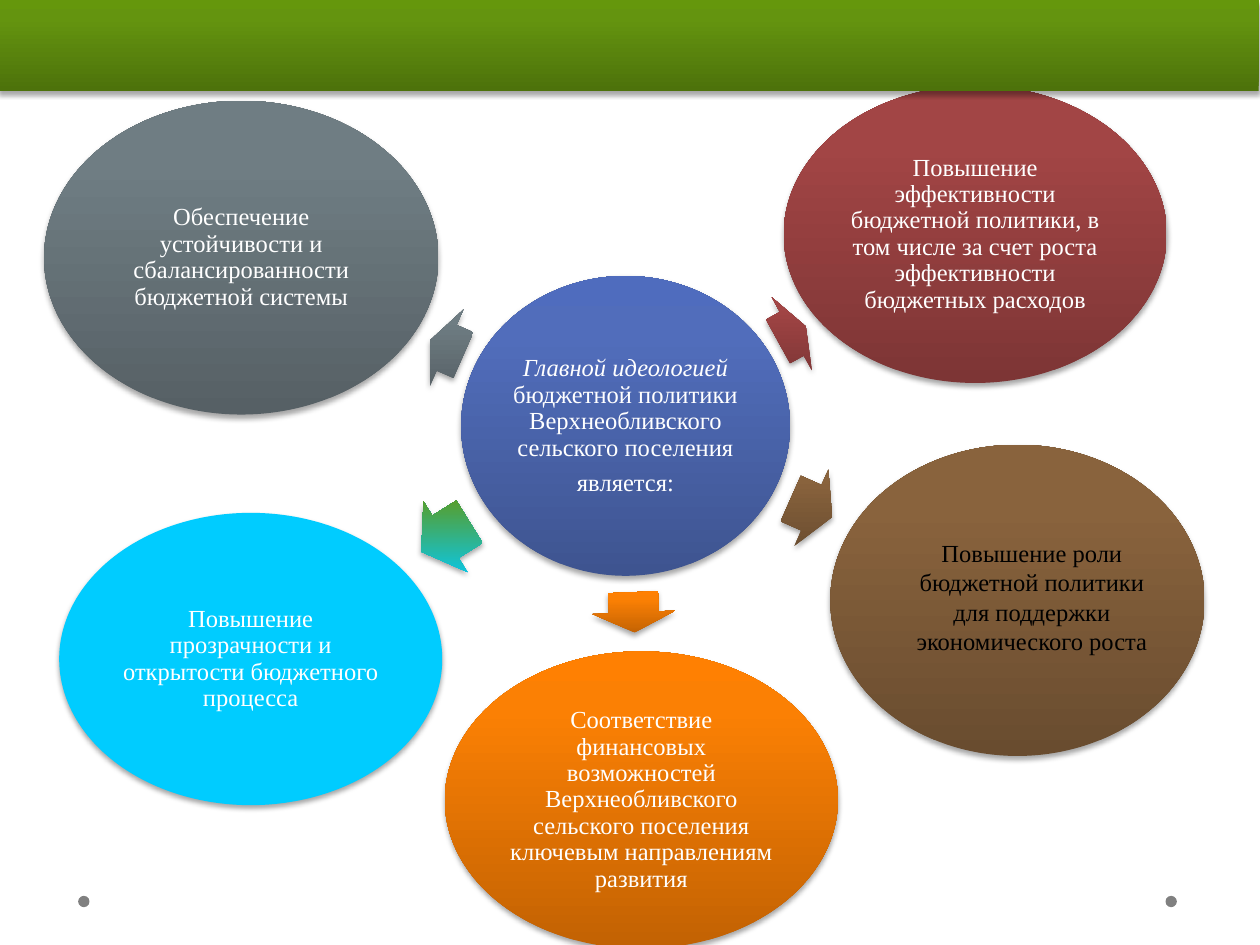
from dataclasses import dataclass

from lxml import etree
from pptx import Presentation
from pptx.dml.color import RGBColor
from pptx.enum.shapes import MSO_SHAPE as Preset
from pptx.enum.text import MSO_ANCHOR, MSO_AUTO_SIZE, PP_ALIGN
from pptx.oxml import parse_xml
from pptx.oxml.ns import nsdecls
from pptx.util import Inches, Pt

FONT = "Times New Roman"
MAIN = ((0, "3E5490"), (80, "516DBB"), (100, "4F6CBE"))
RED = ((0, "7D3535"), (80, "A24545"), (100, "A44343"))
ORANGE = ((0, "C26203"), (80, "FB8004"), (100, "FF8002"))
BROWN = ((0, "694C2F"), (80, "89633D"), (100, "8B633C"))
GREY = ((0, "566065"), (80, "6F7D83"), (100, "6F7E84"))
CYAN = ((0, "00CCFF"),)
CYAN_GREEN = ((0, "00CCFF"), (100, "65970C"))
GREEN = ((0, "4D720B"), (80, "64940F"), (100, "65970C"))

Stops = tuple[tuple[int, str], ...]
Area = tuple[float, float, float, float]


@dataclass(frozen=True)
class Goal:
    circle: Area
    stops: Stops
    arrow: Area
    angle: float
    arrow_stops: Stops
    text: str = ""


GOALS = [
    Goal((6.22, 0.68, 3.04, 2.36), RED, (6.16, 2.32, 0.25, 0.66), 331.3, RED,
         "Повышение эффективности бюджетной политики, в том числе "
         "за счет роста эффективности бюджетных расходов"),
    Goal((3.53, 5.17, 3.12, 2.36), ORANGE, (4.87, 4.53, 0.32, 0.66), 87.6, ORANGE,
         "Соответствие финансовых возможностей Верхнеобливского "
         "сельского поселения ключевым направлениям развития"),
    Goal((6.59, 3.53, 2.97, 2.47), BROWN, (6.26, 3.7, 0.36, 0.66), 24, BROWN),
    Goal((0.47, 4.07, 3.04, 2.32), CYAN, (3.31, 3.93, 0.45, 0.66), 148.1, CYAN_GREEN,
         "Повышение прозрачности и открытости бюджетного процесса"),
    Goal((0.35, 0.8, 3.13, 2.49), GREY, (3.4, 2.43, 0.29, 0.66), 203.6, GREY,
         "Обеспечение устойчивости и сбалансированности бюджетной системы"),
]


def color(value: str) -> RGBColor:
    return RGBColor.from_string(value)


def add_figure(page, preset: Preset, area: Area, stops: Stops, shadow: bool = True):
    """Add a borderless shape; several stops make a gradient running upwards."""
    figure = page.shapes.add_shape(preset, *map(Inches, area))
    figure.line.fill.background()
    figure.shadow.inherit = False
    if len(stops) == 1:
        figure.fill.solid()
        figure.fill.fore_color.rgb = color(stops[0][1])
    else:
        marks = "".join(
            f'<a:gs pos="{place * 1000}"><a:srgbClr val="{value}"/></a:gs>'
            for place, value in stops)
        gradient = parse_xml(
            f'<a:gradFill {nsdecls("a")} rotWithShape="0"><a:gsLst>{marks}</a:gsLst>'
            '<a:lin ang="16200000" scaled="0"/></a:gradFill>')
        figure.line._ln.addprevious(gradient)
    if shadow:
        add_shadow(figure)
    return figure


def add_shadow(figure) -> None:
    effects = figure._element.spPr.find("{*}effectLst")
    outer = parse_xml(
        f'<a:outerShdw {nsdecls("a")} blurRad="{Pt(3.1)}" dist="{Pt(1.8)}" '
        'dir="5400000" rotWithShape="0"><a:srgbClr val="000000">'
        '<a:alpha val="35000"/></a:srgbClr></a:outerShdw>')
    effects.append(outer)


def write(box, *paragraphs: str, fill: str = "FFFFFF", spacing: float = 0.9,
          after: float = 4.9, margin: float | None = 0.02, lead: str = "") -> None:
    """Fill a shape with centred text; lead is an italic opening."""
    frame = box.text_frame
    frame.word_wrap = True
    frame.vertical_anchor = MSO_ANCHOR.MIDDLE
    if margin is not None:
        frame.margin_left = frame.margin_right = Inches(margin)
        frame.margin_top = frame.margin_bottom = Inches(margin)
    for index, text in enumerate(paragraphs):
        para = frame.add_paragraph() if index else frame.paragraphs[0]
        para.alignment = PP_ALIGN.CENTER
        para.line_spacing = spacing
        para.space_after = Pt(after)
        opening = lead if index == 0 else ""
        for part, italic in ((opening, True), (text, False)):
            if part:
                span = para.add_run()
                span.text = part
                span.font.name = FONT
                span.font.size = Pt(14)
                span.font.italic = italic
                span.font.color.rgb = color(fill)


def add_goal(page, goal: Goal) -> None:
    arrow = add_figure(page, Preset.RIGHT_ARROW, goal.arrow, goal.arrow_stops)
    arrow.adjustments[0] = 0.6
    arrow.adjustments[1] = 0.5
    arrow.rotation = goal.angle
    circle = add_figure(page, Preset.OVAL, goal.circle, goal.stops)
    if goal.text:
        write(circle, goal.text)


def main() -> None:
    deck = Presentation()
    deck.slide_width, deck.slide_height = Inches(10), Inches(7.5)
    page = deck.slides.add_slide(deck.slide_layouts[6])

    for left in (9.25, 0.62):
        add_figure(page, Preset.OVAL, (left, 7.11, 0.09, 0.09), ((0, "808080"),),
                   shadow=False)

    center = add_figure(page, Preset.OVAL, (3.66, 2.19, 2.61, 2.38), MAIN)
    write(center, "бюджетной политики Верхнеобливского сельского поселения",
          "является:", lead="Главной идеологией ")
    for goal in GOALS:
        add_goal(page, goal)

    growth = page.shapes.add_textbox(*map(Inches, (7.05, 4.22, 2.28, 1.04)))
    write(growth, "Повышение роли бюджетной политики для поддержки экономического роста",
          fill="000000", spacing=1.0, after=0, margin=None)
    growth.text_frame.vertical_anchor = MSO_ANCHOR.TOP
    growth.text_frame.auto_size = MSO_AUTO_SIZE.SHAPE_TO_FIT_TEXT

    add_figure(page, Preset.RECTANGLE, (-0.01, 0, 10, 0.72), GREEN)
    deck.save("out.pptx")


if __name__ == "__main__":
    main()
